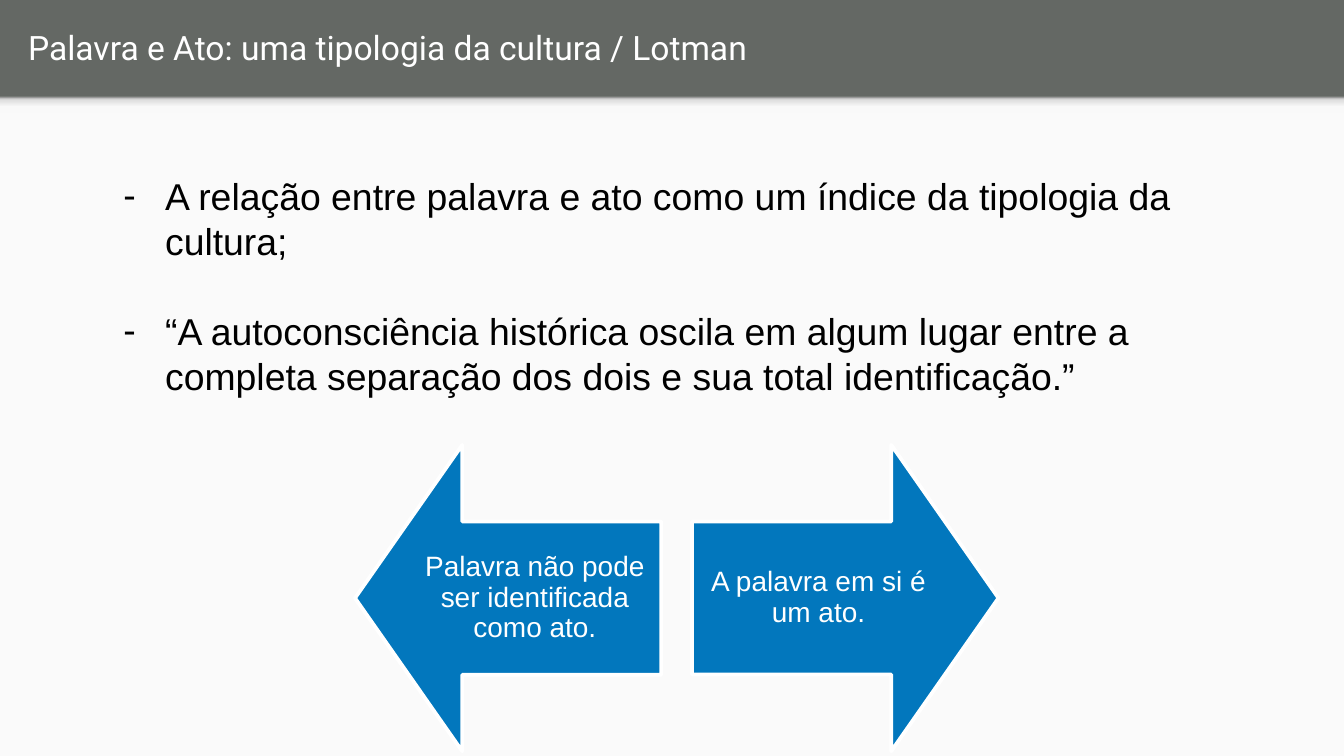
from lxml.etree import SubElement as Sub
from pptx import Presentation
from pptx.dml.color import RGBColor as RGB
from pptx.enum.shapes import MSO_SHAPE as Shape
from pptx.enum.text import MSO_ANCHOR as Anchor, MSO_AUTO_SIZE as Auto, PP_ALIGN as Align
from pptx.oxml.ns import qn
from pptx.util import Cm, Pt

HEAD = "Palavra e Ato: uma tipologia da cultura / Lotman"
POINTS = [
    "A relação entre palavra e ato como um índice da tipologia da cultura;",
    "“A autoconsciência histórica oscila em algum lugar entre a completa "
    "separação dos dois e sua total identificação.”",
]
ARROWS = [
    {"text": "Palavra não pode ser identificada como ato.", "left": 6.71, "turn": 270, "shift": 1.01},
    {"text": "A palavra em si é um ato.", "left": 13.08, "turn": 90, "shift": 0},
]
COLORS = {"bar": "646864", "panel": "FAFAFA", "blue": "0277BD", "white": "FFFFFF", "black": "000000"}
FADE = [(0, "F9F9F9"), (36, "F9F9F9"), (80, "DEDEDE"), (100, "999999")]
WIDE, HIGH, TOP = 25.4, 14.29, 1.83
SIDE, LABEL, DEEP = 5.79, 4.78, 2.9
ROW = 8.41


def setup(obj, form):
    """Set each attribute named in the format dict."""
    for key, val in form.items():
        setattr(obj, key, val)


def place(obj, left, top, width, height):
    """Move and size an object in centimetres."""
    setup(obj, {"left": Cm(left), "top": Cm(top), "width": Cm(width), "height": Cm(height)})


def paint(fill, name):
    """Apply a solid colour to a fill."""
    fill.solid()
    fill.fore_color.rgb = RGB.from_string(COLORS[name])


def frame(shape, pad, anchor):
    """Prepare a text frame with equal insets."""
    sides = ("margin_left", "margin_top", "margin_right", "margin_bottom")
    form = dict.fromkeys(sides, Cm(pad))
    setup(shape.text_frame, {**form, "word_wrap": True, "auto_size": Auto.NONE, "vertical_anchor": anchor})
    return shape.text_frame


def write(para, text, face, size, color, form):
    """Add one formatted run to a paragraph."""
    setup(para, form)
    run = para.add_run()
    run.text = text
    setup(run.font, {"name": face, "size": Pt(size)})
    run.font.color.rgb = RGB.from_string(COLORS[color])


def draw(slide, kind, box):
    """Add a preset shape without shadow or outline."""
    shape = slide.shapes.add_shape(kind, *map(Cm, box))
    shape.shadow.inherit = False
    shape.line.fill.background()
    return shape


def fade(shape):
    """Give a shape the upward gradient."""
    shape.fill.gradient()
    grad = shape.fill._xPr.find(qn("a:gradFill"))
    stops = grad.find(qn("a:gsLst"))
    for old in list(stops):
        stops.remove(old)
    for pos, color in FADE:
        stop = Sub(stops, qn("a:gs"), pos=str(pos * 1000))
        Sub(stop, qn("a:srgbClr"), val=color)
    grad.find(qn("a:lin")).set("ang", str(270 * 60000))


def dash(para):
    """Give a paragraph a hanging dash bullet."""
    props = para._p.get_or_add_pPr()
    props.set("marL", str(Cm(0.79)))
    props.set("indent", str(-Cm(0.79)))
    Sub(Sub(props, qn("a:buClr")), qn("a:srgbClr"), val=COLORS["black"])
    Sub(props, qn("a:buFont"), typeface="Arial")
    Sub(props, qn("a:buChar"), char="-")


def arrow(slide, item):
    """Draw one turned arrow with its label."""
    shape = draw(slide, Shape.UP_ARROW, (item["left"], ROW, SIDE, SIDE))
    shape.rotation = item["turn"]
    shape.adjustments[0], shape.adjustments[1] = 0.5, 0.35
    paint(shape.fill, "blue")
    paint(shape.line.fill, "white")
    shape.line.width = Pt(2)
    box = (item["left"] + item["shift"], ROW + (SIDE - DEEP) / 2, LABEL, DEEP)
    label = slide.shapes.add_textbox(*map(Cm, box))
    para = frame(label, 0.3, Anchor.MIDDLE).paragraphs[0]
    write(para, item["text"], "Arial", 15, "white", {"alignment": Align.CENTER, "line_spacing": 0.9})


def main():
    """Build and save the slide."""
    deck = Presentation()
    setup(deck, {"slide_width": Cm(WIDE), "slide_height": Cm(HIGH)})
    slide = deck.slides.add_slide(deck.slide_layouts[1])
    paint(slide.background.fill, "bar")

    panel = draw(slide, Shape.RECTANGLE, (0, TOP, WIDE, HIGH - TOP))
    paint(panel.fill, "panel")
    strip = draw(slide, Shape.RECTANGLE, (0, TOP, WIDE, 0.3))
    fade(strip)
    for spot, shape in enumerate((panel, strip), 2):
        slide.shapes._spTree.insert(spot, shape._element)

    title, body = slide.placeholders
    place(title, 0.28, 0.05, 24.51, 1.68)
    para = frame(title, 0.25, Anchor.MIDDLE).paragraphs[0]
    write(para, HEAD, "Roboto", 18, "white", {"alignment": Align.LEFT})

    place(body, 2.08, 3.15, 20.93, 6.32)
    text = frame(body, 0.25, Anchor.TOP)
    text.margin_top = Cm(0.13)
    for num, point in enumerate(POINTS):
        para = text.add_paragraph() if num else text.paragraphs[0]
        dash(para)
        write(para, point, "Arial", 20, "black", {"space_before": Pt(24 * num), "line_spacing": 1.0})

    for item in ARROWS:
        arrow(slide, item)
    deck.save("out.pptx")


if __name__ == "__main__":
    main()
